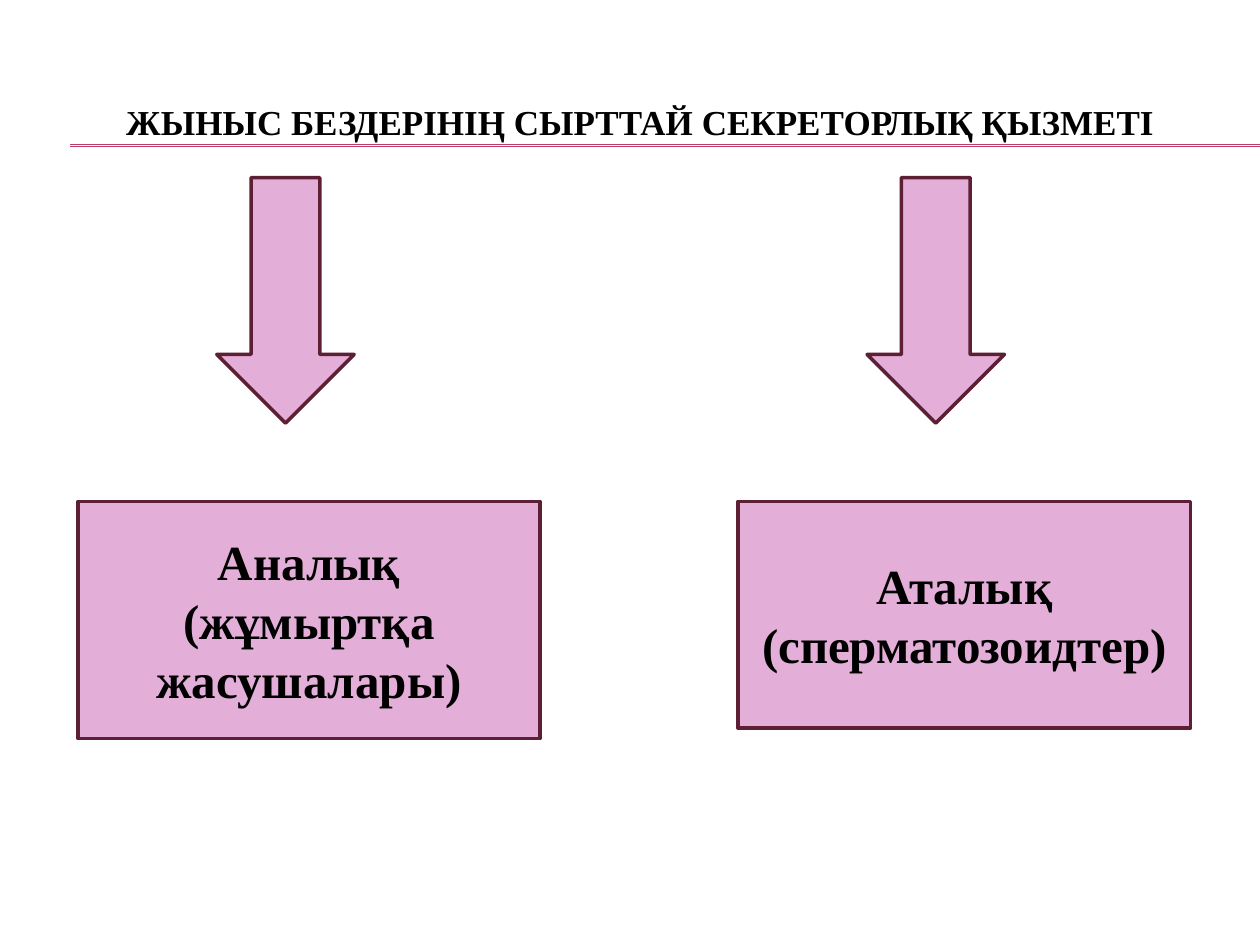
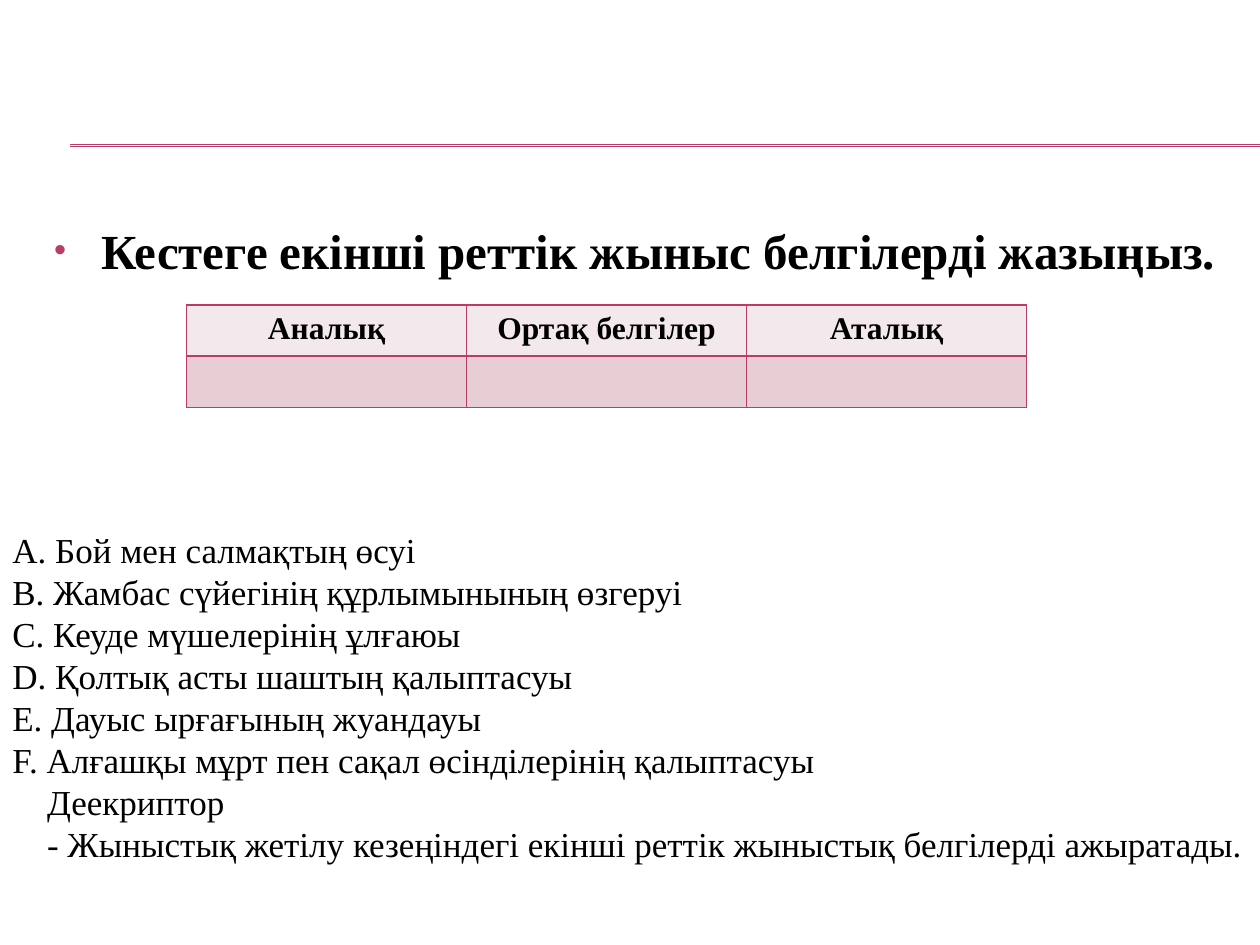
import pptx
import pptx.dml.color
import pptx.enum.shapes
import pptx.enum.text
import pptx.oxml
import pptx.oxml.ns
import pptx.util
import lxml.etree

Cm = pptx.util.Cm
Pt = pptx.util.Pt
SHAPE = pptx.enum.shapes.MSO_SHAPE
ALIGN = pptx.enum.text.PP_ALIGN
ANCHOR = pptx.enum.text.MSO_ANCHOR

FONT = "Times New Roman"
COLORS = {
    "ink": "000000",
    "rule": "B83D68",
    "pink": "E3AFD8",
    "edge": "5C1F34",
    "head": "F3E8EB",
    "cell": "E6CED4",
}
TITLE_BOX = (0.84, 1.27, 24.13, 2.34)
TASK_BOX = (0.84, 4.32, 24.13, 12.57)
TABLE_BOX = (3.76, 6.15, 16.94, 2.06)
LIST_BOX = (0, 10.52, 25.53, 7.09)
# Arrow box, target box, text
BRANCHES = [
    ((4.37, 3.58, 2.77, 4.95), (1.57, 10.11, 9.32, 4.78),
     "Аналық\n(жұмыртқа жасушалары)"),
    ((17.48, 3.58, 2.77, 4.95), (14.88, 10.11, 9.12, 4.57),
     "Аталық (сперматозоидтер)"),
]
HEADS = ["Аналық", "Ортақ белгілер", "Аталық"]
SIGNS = [
    "А. Бой мен салмақтың өсуі",
    "В. Жамбас сүйегінің құрлымынының өзгеруі",
    "С. Кеуде мүшелерінің ұлғаюы",
    "D. Қолтық асты шаштың қалыптасуы",
    "Е. Дауыс ырғағының жуандауы",
    "F. Алғашқы мұрт пен сақал өсінділерінің қалыптасуы",
]
GOALS = [
    "Деекриптор",
    "- Жыныстық жетілу кезеңіндегі екінші реттік жыныстық белгілерді ажыратады.",
]


def color(name):
    return pptx.dml.color.RGBColor.from_string(COLORS[name])


def place(box):
    return [Cm(size) for size in box]


def add_tag(parent, tag, **values):
    node = lxml.etree.SubElement(parent, pptx.oxml.ns.qn(tag))
    for key, value in values.items():
        node.set(key, str(value))
    return node


def style_text(frame, size, bold=False, align=ALIGN.LEFT):
    for para in frame.paragraphs:
        para.alignment = align
        for run in para.runs:
            run.font.name = FONT
            run.font.size = Pt(size)
            run.font.bold = bold
            run.font.color.rgb = color("ink")


def add_rules(slide):
    """Draw the double line under the title zone."""
    for top in (2.92, 2.95):
        line = slide.shapes.add_connector(
            pptx.enum.shapes.MSO_CONNECTOR.STRAIGHT,
            Cm(1.42), Cm(top), Cm(25.4), Cm(top))
        line.line.color.rgb = color("rule")
        line.line.width = Pt(0.75)
        add_tag(line._element.spPr, "a:effectLst")


def add_title(slide, box, text):
    title = slide.shapes.title
    title.left, title.top, title.width, title.height = place(box)
    frame = title.text_frame
    frame.text = text
    frame.auto_size = pptx.enum.text.MSO_AUTO_SIZE.NONE
    frame.vertical_anchor = ANCHOR.MIDDLE
    style_text(frame, 20, True, ALIGN.CENTER)


def add_block(slide, kind, box, text=""):
    block = slide.shapes.add_shape(kind, *place(box))
    block.shadow.inherit = False
    block.fill.solid()
    block.fill.fore_color.rgb = color("pink")
    block.line.color.rgb = color("edge")
    block.line.width = Pt(2)
    if text:
        block.text_frame.text = text
        block.text_frame.vertical_anchor = ANCHOR.MIDDLE
        style_text(block.text_frame, 28, True, ALIGN.CENTER)


def add_text(slide, box, text, size, bold=False):
    frame = slide.shapes.add_textbox(*place(box)).text_frame
    frame.word_wrap = True
    frame.text = text
    style_text(frame, size, bold)
    return frame


def add_task(slide, box, text):
    para = add_text(slide, box, text, 28, True).paragraphs[0]
    para.space_before = Pt(5.6)
    props = para._p.get_or_add_pPr()
    props.set("marL", str(Cm(0.95)))
    props.set("indent", str(Cm(-0.95)))
    tint = add_tag(props, "a:buClr")
    add_tag(tint, "a:srgbClr", val=COLORS["rule"])
    add_tag(props, "a:buSzPct", val=70000)
    add_tag(props, "a:buFont", typeface="Arial")
    add_tag(props, "a:buChar", char="•")


def style_cell(cell, fill):
    props = cell._tc.get_or_add_tcPr()
    for side in ("a:lnL", "a:lnR", "a:lnT", "a:lnB"):
        line = add_tag(props, side, w=Pt(1))
        add_tag(add_tag(line, "a:solidFill"), "a:srgbClr", val=COLORS["rule"])
    cell.fill.solid()
    cell.fill.fore_color.rgb = color(fill)


def add_grid(slide, box, heads):
    """Add a table with a head row and one row left to fill in."""
    table = slide.shapes.add_table(2, len(heads), *place(box)).table
    table.first_row = table.horz_banding = False
    for col, head in enumerate(heads):
        top, low = table.cell(0, col), table.cell(1, col)
        top.text_frame.text = head
        style_text(top.text_frame, 18, True, ALIGN.CENTER)
        style_cell(top, "head")
        style_cell(low, "cell")


def add_list(slide, box, signs, goals):
    frame = add_text(slide, box, "\n".join(signs + goals), 20)
    for para in frame.paragraphs[len(signs):]:
        para._p.get_or_add_pPr().set("marL", str(Cm(0.7)))


def build_types(deck):
    slide = deck.slides.add_slide(deck.slide_layouts[5])
    add_rules(slide)
    add_title(slide, TITLE_BOX, "ЖЫНЫС БЕЗДЕРІНІҢ СЫРТТАЙ СЕКРЕТОРЛЫҚ ҚЫЗМЕТІ")
    for arrow, box, text in BRANCHES:
        add_block(slide, SHAPE.RECTANGLE, box, text)
        add_block(slide, SHAPE.DOWN_ARROW, arrow)


def build_task(deck):
    slide = deck.slides.add_slide(deck.slide_layouts[6])
    add_rules(slide)
    add_task(slide, TASK_BOX, "Кестеге екінші реттік жыныс белгілерді жазыңыз.")
    add_grid(slide, TABLE_BOX, HEADS)
    add_list(slide, LIST_BOX, SIGNS, GOALS)


def main():
    deck = pptx.Presentation()
    deck.slide_width, deck.slide_height = Cm(25.4), Cm(19.05)
    build_types(deck)
    build_task(deck)
    deck.save("out.pptx")


if __name__ == "__main__":
    main()
